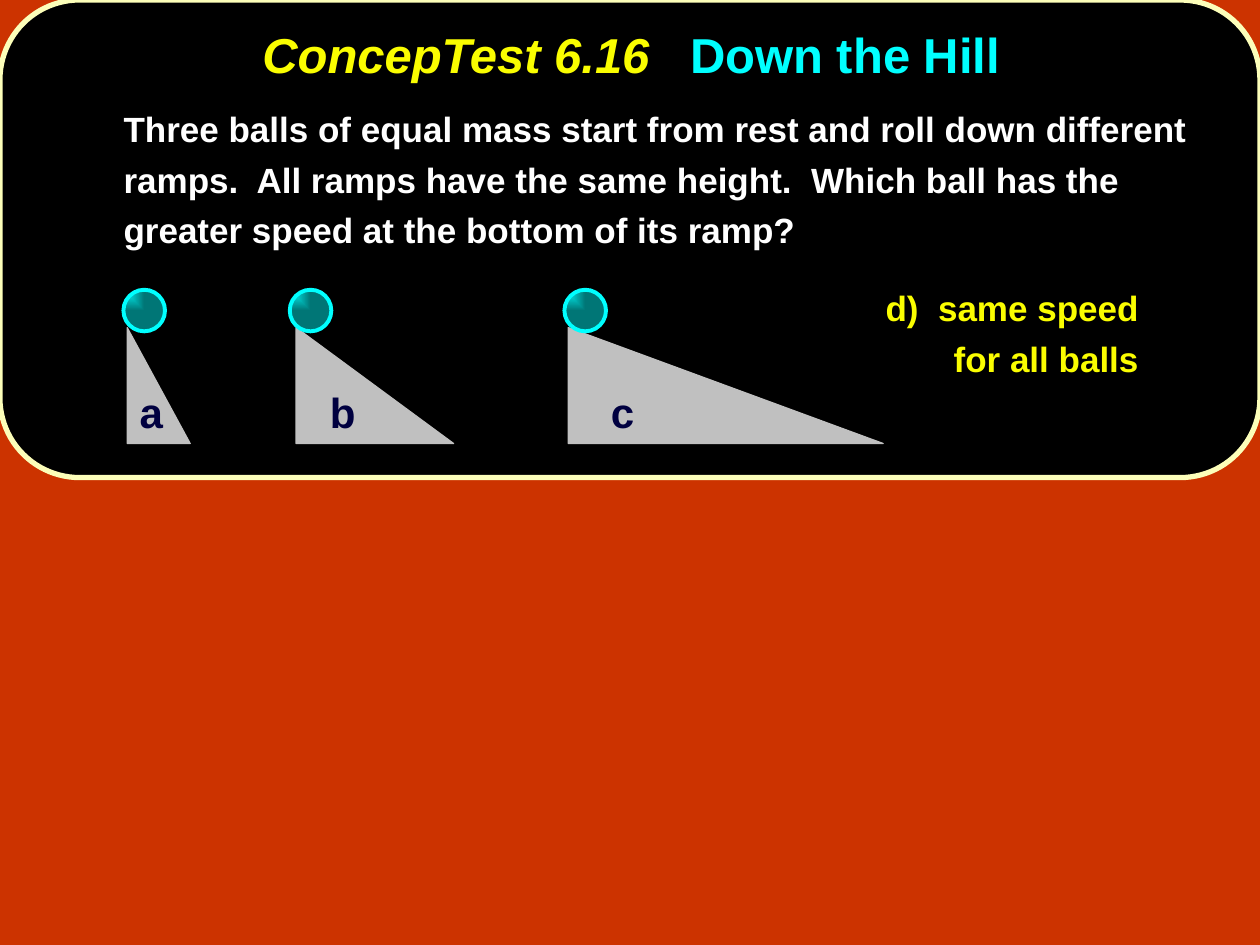
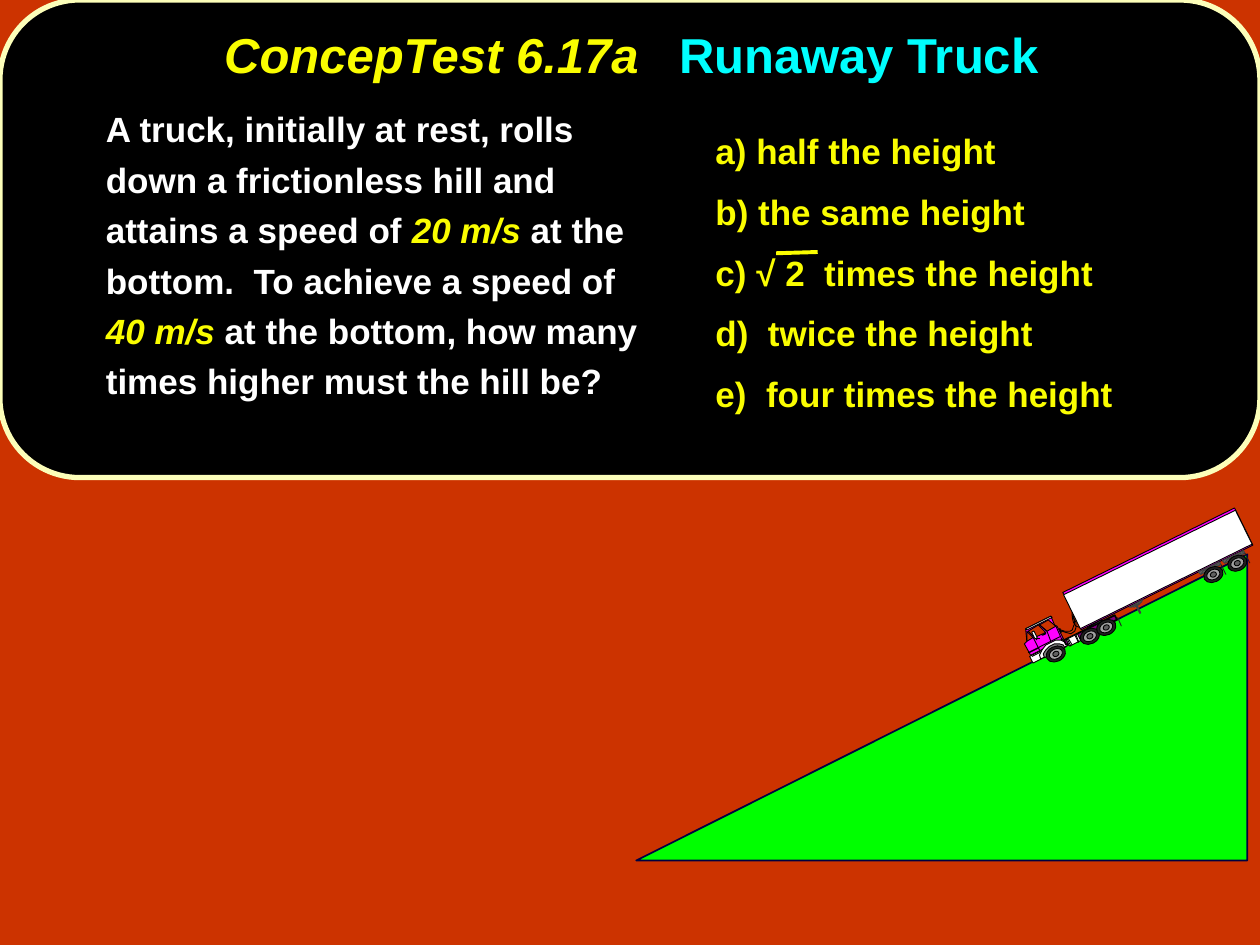
"""Build two physics concept-test slides: balls on ramps and a runaway truck."""
from dataclasses import dataclass
from pptx import Presentation
from pptx.dml.color import RGBColor
from pptx.enum.shapes import MSO_CONNECTOR, MSO_SHAPE
from pptx.enum.text import MSO_ANCHOR, MSO_AUTO_SIZE, PP_ALIGN
from pptx.oxml import parse_xml
from pptx.oxml.ns import nsdecls
from pptx.util import Inches, Pt


@dataclass(frozen=True)
class Theme:
    """Colours, type sizes and the font of the deck."""
    font: str = "Arial"
    title_size: int = 28
    text_size: int = 20
    label_size: int = 24
    background: str = "CC3300"
    panel: str = "000000"
    panel_edge: str = "FCFEB9"
    yellow: str = "FAFD00"
    cyan: str = "00FFFF"
    teal: str = "007676"
    white: str = "FFFFFF"
    navy: str = "000040"
    ramp: str = "C0C0C0"
    hill: str = "00FF00"
    cab: str = "FF00FF"
    chassis: str = "800080"
    black: str = "000000"
    tyre: str = "202020"
    rim: str = "A0A0A0"
    steel: str = "606060"
    dark_steel: str = "404040"
    arch: str = "808080"


THEME = Theme()
COLUMNS, ROWS = 10, 7.5
SLOPE = -26.2
HAIRLINE = 0.5
TITLE_GAP = 15.6

RAMPS = [("b", 2.35, 1.25, 2.3, 2.52), ("c", 4.51, 2.5, 4.48, 4.75),
         ("a", 1.01, 0.5, 0.98, 1.01)]

WHEELS = [(9.63, 4.56), (9.82, 4.47), (8.65, 5.05), (8.78, 4.98), (8.38, 5.19)]
WHEEL_RINGS = [(0.16, 0.12, THEME.tyre), (0.11, 0.08, THEME.rim),
               (0.05, 0.04, THEME.steel)]

TRAILER = [((8.43, 4.35, 1.52, 0.33), THEME.cab),
           ((8.43, 4.37, 1.52, 0.3), THEME.white)]
LANDING_LEG = [[(8.96, 4.82), (9.07, 4.76), (9.06, 4.78), (8.98, 4.82)],
               [(8.99, 4.81), (9.05, 4.79), (9.04, 4.8), (9, 4.82)]]
AXLE_STEP = (0.19, -0.09)
AXLE_BEAM = [(9.51, 4.54), (9.68, 4.46), (9.69, 4.48), (9.53, 4.56)]
AXLE_FRAME = [(9.53, 4.56), (9.55, 4.53), (9.66, 4.48), (9.66, 4.49)]
AXLE_STAY = [(9.67, 4.46), (9.68, 4.49)]
MUD_FLAP = [(9.69, 4.48), (9.73, 4.56)]

CAB_BODY = [(8.14, 4.99), (8.34, 4.89), (8.37, 4.96), (8.39, 4.97),
            (8.44, 5.07), (8.18, 5.2), (8.13, 5.11), (8.15, 5.09)]
CAB_WINDOWS = [[(8.15, 5.01), (8.15, 5.09), (8.2, 5.06)],
               [(8.16, 5.01), (8.21, 5.06), (8.3, 5.02), (8.24, 4.96)],
               [(8.25, 4.96), (8.31, 5.01), (8.38, 4.97), (8.32, 4.92)]]
CAB_ROOF = [(8.14, 4.99), (8.34, 4.89), (8.35, 4.9), (8.15, 5)]
DOOR_HANDLE = [(8.27, 5.04), (8.3, 5.02), (8.3, 5.03), (8.28, 5.04)]
CAB_SEAMS = [[(8.2, 5.06), (8.25, 5.16)], [(8.24, 4.95), (8.31, 5.01), (8.34, 5.09)],
             [(8.38, 4.97), (8.43, 5.08)], [(8.21, 5.05), (8.23, 5.08)],
             [(8.22, 5.07), (8.25, 5.07)]]
BUMPER_LINES = [[(8.19, 5.21), (8.27, 5.17)], [(8.17, 5.18), (8.25, 5.14)],
                [(8.16, 5.18), (8.42, 5.05)]]
FENDER = [(8.26, 5.23), (8.25, 5.2), (8.27, 5.16), (8.3, 5.12), (8.34, 5.1),
          (8.38, 5.08), (8.42, 5.08), (8.46, 5.1), (8.48, 5.12)]
WHEEL_ARCH = [(8.29, 5.22), (8.28, 5.19), (8.3, 5.16), (8.33, 5.13),
              (8.37, 5.11), (8.41, 5.11), (8.44, 5.12), (8.45, 5.14)]
HOSES = [[(8.42, 5), (8.45, 5.01), (8.49, 5.01), (8.51, 5), (8.52, 4.97),
          (8.53, 4.95), (8.52, 4.89)],
         [(8.43, 5.01), (8.46, 5.02), (8.5, 5.03), (8.53, 5.01), (8.54, 4.98),
          (8.54, 4.94), (8.51, 4.89), (8.51, 4.86)],
         [(8.57, 4.98), (8.54, 4.97), (8.52, 4.94), (8.51, 4.9), (8.52, 4.88)]]
TANK_STRAPS = [[(8.47, 5.07), (8.5, 5.13)], [(8.48, 5.07), (8.51, 5.12)],
               [(8.53, 5.04), (8.56, 5.1)], [(8.54, 5.04), (8.56, 5.09)]]
FIFTH_WHEEL = [(8.63, 4.98), (8.74, 4.92), (8.75, 4.93), (8.67, 4.97)]


def cells(*counts):
    """Turn columns or rows of the one-inch grid into lengths."""
    return [Inches(count) for count in counts]


def rgb(code):
    """Return the colour of a hex code."""
    return RGBColor.from_string(code)


def paint(shape, fill, edge, width):
    """Give a shape a flat fill, or none, and an outline."""
    shape.shadow.inherit = False
    if fill:
        shape.fill.solid()
        shape.fill.fore_color.rgb = rgb(fill)
    else:
        shape.fill.background()
    shape.line.color.rgb = rgb(edge)
    shape.line.width = Pt(width)
    return shape


def add_preset(shapes, kind, box, fill, edge=THEME.black, width=HAIRLINE, turn=0):
    """Add a painted preset shape, turned by some degrees."""
    shape = shapes.add_shape(kind, *cells(*box))
    shape.rotation = turn
    return paint(shape, fill, edge, width)


def add_outline(shapes, contours, fill=None, edge=THEME.black):
    """Add a freeform: closed contours when filled, an open path otherwise."""
    (first, *rest), *holes = [[cells(*point) for point in c] for c in contours]
    builder = shapes.build_freeform(*first)
    builder.add_line_segments(rest, close=bool(fill))
    for start, *others in holes:
        builder.move_to(*start)
        builder.add_line_segments(others, close=True)
    return paint(builder.convert_to_shape(), fill, edge, HAIRLINE)


def add_stroke(shapes, points, color=THEME.black, width=HAIRLINE):
    """Add a straight line, or an open path when there are more points."""
    if len(points) > 2:
        return add_outline(shapes, [points], edge=color)
    start, end = points
    line = shapes.add_connector(MSO_CONNECTOR.STRAIGHT, *cells(*start, *end))
    line.line.color.rgb = rgb(color)
    line.line.width = Pt(width)
    line._element.spPr.append(parse_xml(f"<a:effectLst {nsdecls('a')}/>"))
    return line


def style_run(run, color, size, italic=False):
    """Format one bold run."""
    run.font.name, run.font.size = THEME.font, Pt(size)
    run.font.bold, run.font.italic = True, italic
    run.font.color.rgb = rgb(color)


def add_lines(slide, box, lines, color, size=THEME.text_size, spacing=1.0,
              before=0, wrap=True):
    """Add a text box with one paragraph a line."""
    frame = slide.shapes.add_textbox(*cells(*box)).text_frame
    frame.word_wrap = wrap
    frame.text = "\n".join(lines)
    for index, paragraph in enumerate(frame.paragraphs):
        paragraph.line_spacing = spacing
        paragraph.space_before = Pt(before if index else 0)
        for run in paragraph.runs:
            style_run(run, color, size)
    return frame


def add_question(slide, box, parts):
    """Add the question; every second part is a highlighted value."""
    frame = slide.shapes.add_textbox(*cells(*box)).text_frame
    frame.word_wrap = True
    frame.margin_left = Inches(0.54)
    paragraph = frame.paragraphs[0]
    paragraph.line_spacing = 1.2
    for index, part in enumerate(parts):
        run = paragraph.add_run()
        run.text = part
        value = index % 2 == 1
        style_run(run, THEME.yellow if value else THEME.white, THEME.text_size, value)


def add_title(slide, number, topic):
    """Fill the title with the test number and its topic."""
    title = slide.shapes.title
    title.left, title.top, title.width, title.height = cells(1.02, 0, 7.98, 0.92)
    frame = title.text_frame
    frame.auto_size = MSO_AUTO_SIZE.NONE
    frame.vertical_anchor = MSO_ANCHOR.MIDDLE
    paragraph = frame.paragraphs[0]
    paragraph.alignment, paragraph.line_spacing = PP_ALIGN.CENTER, 0.9
    for text, color, italic in [(f"ConcepTest {number}", THEME.yellow, True),
                                (" ", THEME.yellow, True),
                                (topic, THEME.cyan, False)]:
        run = paragraph.add_run()
        run.text = text
        style_run(run, color, THEME.title_size, italic)
    gap = paragraph.runs[1]
    gap._r.get_or_add_rPr().set("spc", str(round(TITLE_GAP * 100)))


def start_slide(deck, number, topic):
    """Add a slide with the shared background, panel and title."""
    slide = deck.slides.add_slide(deck.slide_layouts[5])
    slide.background.fill.solid()
    slide.background.fill.fore_color.rgb = rgb(THEME.background)
    panel = add_preset(slide.shapes, MSO_SHAPE.ROUNDED_RECTANGLE, (0, 0, COLUMNS, 3.79),
                       THEME.panel, THEME.panel_edge, 3)
    slide.shapes._spTree.insert(2, panel._element)
    add_title(slide, number, topic)
    return slide


def add_ball(slide, left):
    """Add a ball that is lit from its upper left."""
    ball = add_preset(slide.shapes, MSO_SHAPE.OVAL, (left, 2.3, 0.33, 0.33),
                      THEME.teal, THEME.cyan, 2.25)
    ball.fill.gradient()
    for stop, color in zip(ball.fill.gradient_stops, (THEME.cyan, THEME.teal)):
        stop.color.rgb = rgb(color)
    gradient = ball._element.spPr.gradFill
    gradient.replace(gradient.lin, parse_xml(
        f'<a:path {nsdecls("a")} path="rect"><a:fillToRect r="100000" b="100000"/></a:path>'))


def add_axle(shapes, step):
    """Add one trailer axle, moved along the trailer by whole steps."""
    beam, frame, stay, flap = [
        [(x + step * AXLE_STEP[0], y + step * AXLE_STEP[1]) for x, y in points]
        for points in (AXLE_BEAM, AXLE_FRAME, AXLE_STAY, MUD_FLAP)]
    add_outline(shapes, [beam], THEME.steel, THEME.dark_steel)
    add_stroke(shapes, frame, THEME.dark_steel)
    add_stroke(shapes, stay, THEME.dark_steel)
    add_stroke(shapes, flap, THEME.tyre)


def add_wheel(shapes, across, down):
    """Add the tyre, rim and hub around one centre."""
    for width, height, color in WHEEL_RINGS:
        add_preset(shapes, MSO_SHAPE.OVAL,
                   (across - width / 2, down - height / 2, width, height),
                   color, turn=SLOPE)


def add_bar(shapes, box, fill, edge=THEME.black, width=HAIRLINE):
    """Add a rectangle that lies along the slope."""
    add_preset(shapes, MSO_SHAPE.RECTANGLE, box, fill, edge, width, SLOPE)


def add_cab(shapes):
    """Add the cab with its windows, bumper and fender."""
    add_outline(shapes, [CAB_BODY, *CAB_WINDOWS], THEME.cab)
    add_bar(shapes, (8.17, 5.14, 0.3, 0.06), THEME.white)
    for points in CAB_SEAMS + BUMPER_LINES:
        add_stroke(shapes, points)
    add_preset(shapes, MSO_SHAPE.ROUNDED_RECTANGLE, (8.2, 5.01, 0.02, 0.06),
               THEME.white, turn=SLOPE)
    for points, fill in [(DOOR_HANDLE, THEME.white), (CAB_ROOF, THEME.white),
                         (FENDER, THEME.white), (WHEEL_ARCH, THEME.arch)]:
        add_outline(shapes, [points], fill)


def add_truck(slide):
    """Add the truck as one group."""
    shapes = slide.shapes.add_group_shape().shapes
    for box, fill in TRAILER:
        add_bar(shapes, box, fill)
    for points in LANDING_LEG:
        add_outline(shapes, [points], THEME.steel, THEME.dark_steel)
    add_bar(shapes, (9.03, 4.8, 0.01, 0.07), THEME.steel, THEME.dark_steel)
    for step in range(2):
        add_axle(shapes, step)
    add_bar(shapes, (8.41, 4.99, 0.01, 0.03), THEME.steel)
    add_cab(shapes)
    for hose in HOSES:
        add_stroke(shapes, hose)
    add_stroke(shapes, [(8.87, 4.9), (8.9, 4.97)], THEME.tyre)
    add_bar(shapes, (8.43, 4.98, 0.45, 0.04), THEME.chassis, width=1)
    add_bar(shapes, (8.47, 5.05, 0.1, 0.06), THEME.white)
    for strap in TANK_STRAPS:
        add_stroke(shapes, strap)
    add_outline(shapes, [FIFTH_WHEEL], THEME.dark_steel)
    for centre in WHEELS:
        add_wheel(shapes, *centre)


def build_ramps(deck):
    """Build the slide with three balls on ramps."""
    slide = start_slide(deck, "6.16", "Down the Hill")
    add_question(slide, (0.44, 0.74, 9.11, 2.62), [
        "Three balls of equal mass start from rest and roll down different ramps.  "
        "All ramps have the same height.  Which ball has the greater speed at the "
        "bottom of its ramp?"])
    for letter, left, base, ball_left, label_left in RAMPS:
        add_preset(slide.shapes, MSO_SHAPE.RIGHT_TRIANGLE, (left, 2.6, base, 0.92),
                   THEME.ramp, THEME.ramp, 0.75)
        add_ball(slide, ball_left)
        add_lines(slide, (label_left, 3.02, 0.4, 0.5), [letter], THEME.navy,
                  THEME.label_size, wrap=False)
    answer = add_lines(slide, (6.93, 2.16, 2.58, 0.9), ["d)  same speed", "for all balls"],
                       THEME.yellow, spacing=1.2)
    answer.paragraphs[1]._p.get_or_add_pPr().set("marL", str(Inches(0.54)))


def build_truck(deck):
    """Build the slide with the truck on its hill."""
    slide = start_slide(deck, "6.17a", "Runaway Truck")
    hill = add_preset(slide.shapes, MSO_SHAPE.RIGHT_TRIANGLE, (5.05, 4.4, 4.85, 2.43),
                      THEME.hill, THEME.navy, 1)
    hill._element.spPr.xfrm.set("flipH", "1")
    add_truck(slide)
    add_question(slide, (0.3, 0.74, 4.95, 2.62), [
        "A truck, initially at rest, rolls down a frictionless hill and attains a speed of ",
        "20 m/s", " at the bottom.  To achieve a speed of ", "40 m/s",
        " at the bottom, how many times higher must the hill be?"])
    add_lines(slide, (5.58, 0.91, 3.92, 2.68), [
        "a) half the height", "b) the same height", "c) √ 2  times the height",
        "d)  twice the height", "e)  four times the height"],
        THEME.yellow, spacing=1.2, before=6)
    add_stroke(slide.shapes, [(6.16, 2.01), (6.49, 2)], THEME.yellow, 2.25)


def main():
    """Build and save the deck."""
    deck = Presentation()
    deck.slide_width, deck.slide_height = cells(COLUMNS, ROWS)
    build_ramps(deck)
    build_truck(deck)
    deck.save("out.pptx")


if __name__ == "__main__":
    main()
